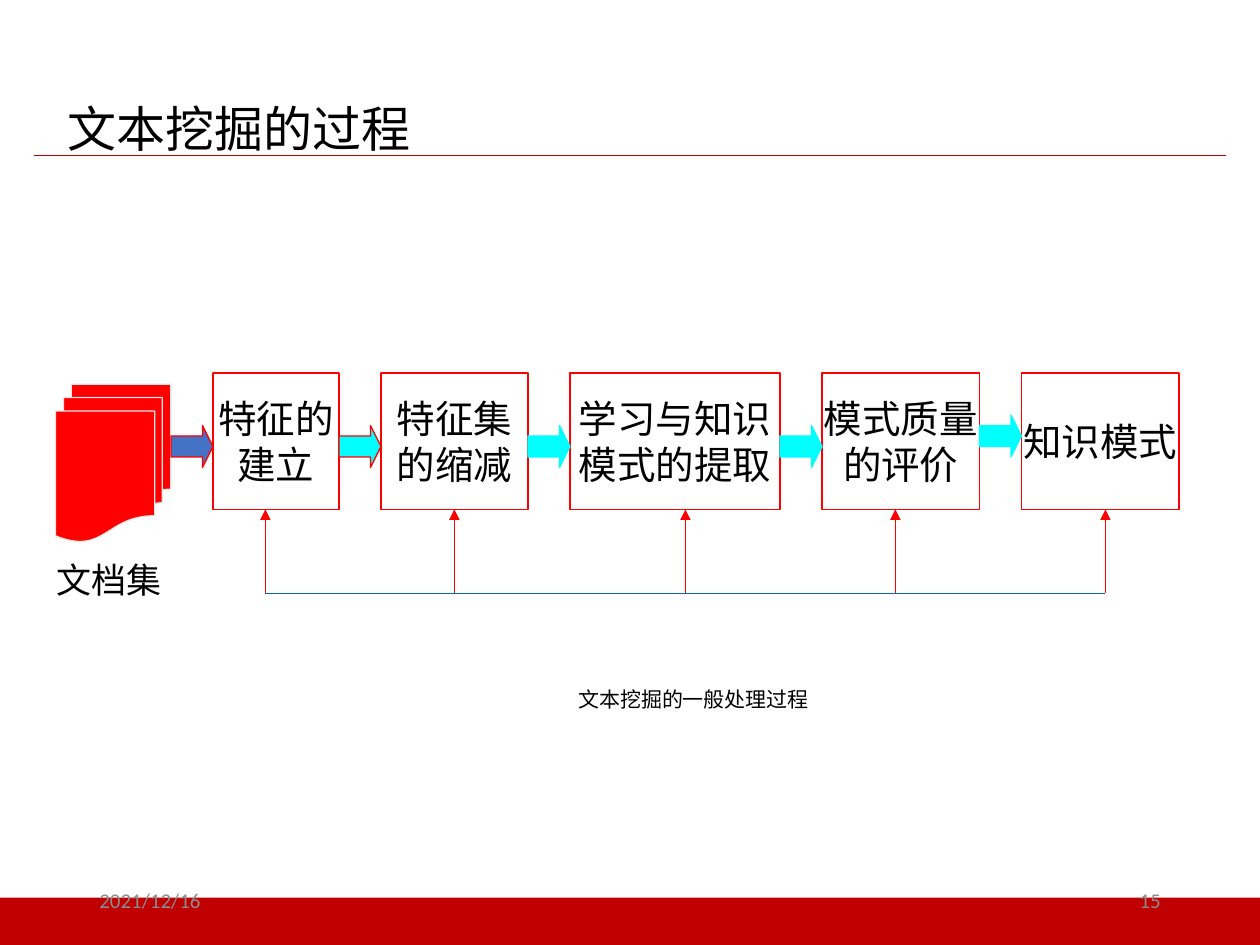
from lxml import etree
from pptx import Presentation
from pptx import util as u
from pptx.dml.color import RGBColor
from pptx.enum import shapes, text
from pptx.oxml.ns import qn

WIDTH, HEIGHT = 10, 7.5
CELL = 1 / 6  # grid unit of the flow chart, in inches
SERIF, SANS = "Times New Roman", "Noto Sans CJK SC"
RED, CYAN, BLACK, GREY = "FF0000", "00FFFF", "000000", "8C8C8C"
LEFT, CENTER, RIGHT = text.PP_ALIGN.LEFT, text.PP_ALIGN.CENTER, text.PP_ALIGN.RIGHT
KIND = shapes.MSO_SHAPE

# label, first column, columns wide, column of the feedback arrow
STEPS = [
    ("特征的建立", 0, 6, 2.5),
    ("特征集的缩减", 8, 7, 11.5),
    ("学习与知识模式的提取", 17, 10, 22.5),
    ("模式质量的评价", 29, 7.5, 32.5),
    ("知识模式", 38.5, 7.5, 42.5),
]
# fill, line and rows above the common height of the arrow before each step
ARROWS = [("4472C4", RED, 0), (CYAN, RED, 0), (CYAN, CYAN, 0),
          (CYAN, CYAN, 0), (CYAN, CYAN, 0.5)]


def color(value):
    return RGBColor.from_string(value)


def inches(*lengths):
    return [u.Inches(length) for length in lengths]


def add_block(page, kind, box, fill=None, line=None):
    block = page.shapes.add_shape(kind, *inches(*box))
    block.shadow.inherit = False
    if fill:
        block.fill.solid()
        block.fill.fore_color.rgb = color(fill)
    else:
        block.fill.background()
    if line:
        block.line.color.rgb = color(line)
        block.line.width = u.Pt(0.75)
    else:
        block.line.fill.background()
    return block


def add_line(page, start, end, line, width=0.75, arrow=False):
    connector = page.shapes.add_connector(
        shapes.MSO_CONNECTOR.STRAIGHT, *inches(*start, *end))
    connector.line.color.rgb = color(line)
    connector.line.width = u.Pt(width)
    if arrow:
        outline = connector.line._get_or_add_ln()
        etree.SubElement(outline, qn("a:tailEnd"), type="triangle")
    etree.SubElement(connector._element.spPr, qn("a:effectLst"))
    return connector


def write(shape, words, size, font, align=LEFT, ink=BLACK, wrap=True,
          anchor=text.MSO_ANCHOR.TOP):
    frame = shape.text_frame
    frame.word_wrap = wrap
    frame.vertical_anchor = anchor
    para = frame.paragraphs[0]
    para.text = words
    para.alignment = align
    para.font.size = u.Pt(size)
    para.font.name = font
    para.font.color.rgb = color(ink)
    return para


def add_text(page, box, *args, **options):
    return write(page.shapes.add_textbox(*inches(*box)), *args, **options)


def add_header(page, left, top, width):
    rule = top + 0.5
    add_line(page, (left, rule), (left + width, rule), "C00000", 0.5)
    add_text(page, (left + 0.17, top, 2.95, 0.57), "文本挖掘的过程", 28, SANS,
             wrap=False)


def add_footer(page, top):
    add_block(page, KIND.RECTANGLE, (-0.03, top, WIDTH + 0.04, 0.4), "C00000")
    for left, words, align in ((0.69, "2021/12/16", LEFT), (7.06, "15", RIGHT)):
        add_text(page, (left, top - 0.18, 2.25, 0.4), words, 12, "Calibri",
                 align, GREY, anchor=text.MSO_ANCHOR.MIDDLE)


def add_documents(page, left, top):
    add_block(page, KIND.FLOWCHART_MULTIDOCUMENT,
              (left, top, 5.5 * CELL, 7.5 * CELL), RED, "E7E6E6")
    add_text(page, (left - 0.09, top + 8 * CELL, 6.5 * CELL, 3.5 * CELL),
             "文档集", 20, SERIF, text.PP_ALIGN.JUSTIFY)


def add_step(page, label, box):
    step = add_block(page, KIND.RECTANGLE, box, line=RED)
    frame = step.text_frame
    frame.margin_left = frame.margin_right = 0
    frame.margin_top = frame.margin_bottom = 0
    write(step, label, 22, SERIF, CENTER, anchor=text.MSO_ANCHOR.MIDDLE)
    return step


def add_flow(page, left, top):
    """Steps in a row, an arrow before each, and feedback from a bus below."""
    height = 6.5 * CELL
    bottom, bus = top + height, top + 10.5 * CELL
    side = 2 * CELL
    for (label, column, columns, feedback), (fill, line, rise) in zip(STEPS, ARROWS):
        x = left + column * CELL
        step = add_step(page, label, (x, top, columns * CELL, height))
        arrow = add_block(page, KIND.RIGHT_ARROW,
                          (x - side, top + (2.5 - rise) * CELL, side, side),
                          fill, line)
        arrow.adjustments[0], arrow.adjustments[1] = 0.5, 0.25
        x = left + feedback * CELL
        link = add_line(page, (x, bus), (x, bottom), RED, arrow=True)
        if feedback == column + columns / 2:
            link.end_connect(step, 2)
    first, last = (left + STEPS[i][3] * CELL for i in (0, -1))
    add_line(page, (first, bus), (last, bus), "0563C1")


def add_caption(page, box):
    para = add_text(page, box, "文本挖掘的一般处理过程", 12, "Karla", CENTER)
    para.space_before = u.Pt(2.4)
    margins = para._p.get_or_add_pPr()
    margins.set("marL", str(u.Inches(1.75)))
    margins.set("indent", str(u.Inches(-0.25)))


def main():
    deck = Presentation()
    deck.slide_width, deck.slide_height = inches(WIDTH, HEIGHT)
    page = deck.slides.add_slide(deck.slide_layouts[6])
    add_footer(page, 0.95 * HEIGHT)
    add_header(page, 0.27, 0.73, WIDTH - 2 * 0.27)
    add_caption(page, (0.67, 0.72 * HEIGHT, 8.17, 0.4))
    add_documents(page, 0.44, 3.05)
    add_flow(page, 1.69, 2.96)
    deck.save("out.pptx")


if __name__ == "__main__":
    main()
